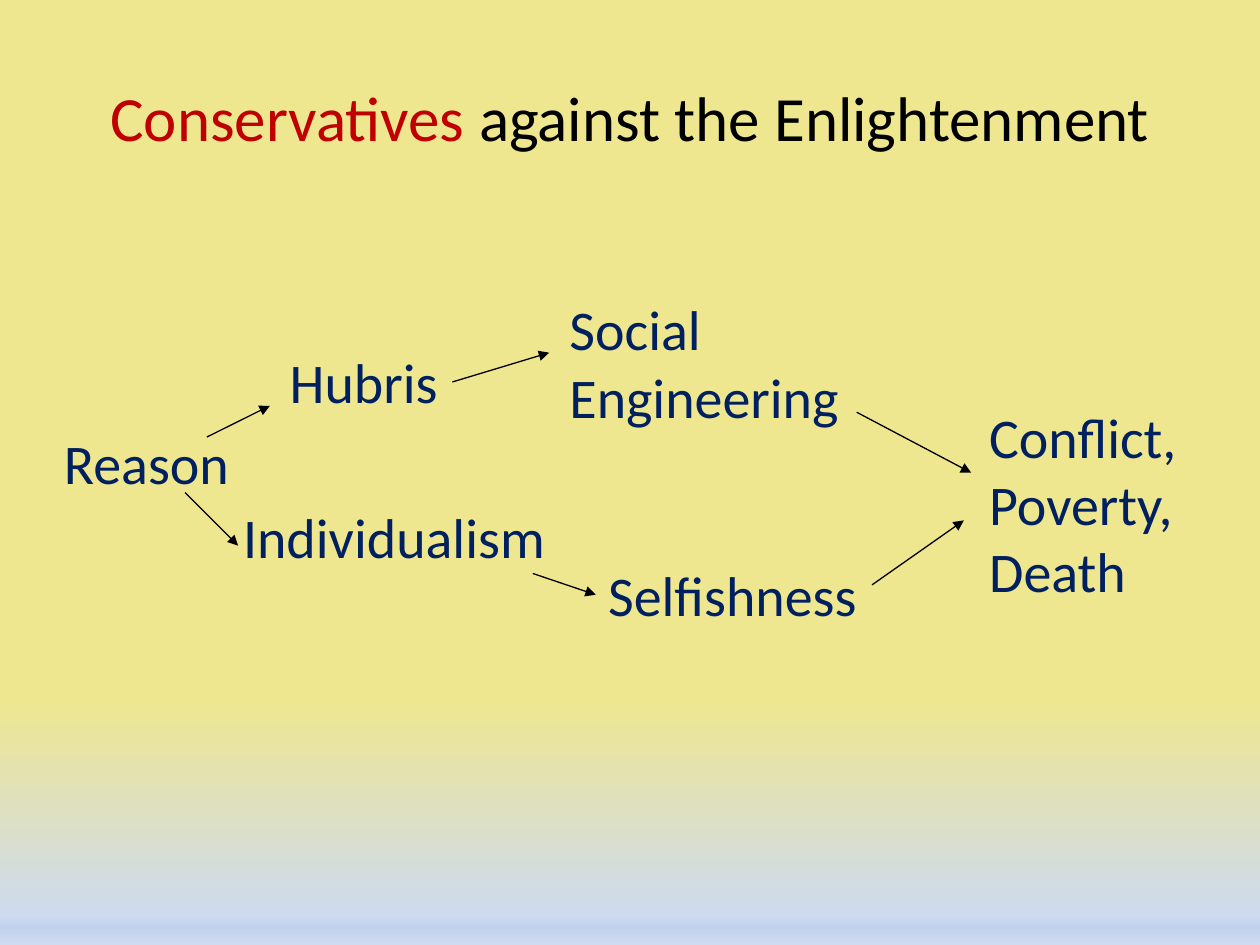
from copy import deepcopy

from pptx import Presentation
from pptx.dml.color import RGBColor
from pptx.enum.shapes import MSO_CONNECTOR
from pptx.enum.text import MSO_ANCHOR, MSO_AUTO_SIZE, PP_ALIGN
from pptx.oxml.ns import qn
from pptx.util import Cm, Pt
from lxml import etree

STRAIGHT = MSO_CONNECTOR.STRAIGHT
MIDDLE = MSO_ANCHOR.MIDDLE
FIT_SHAPE = MSO_AUTO_SIZE.SHAPE_TO_FIT_TEXT
CENTER = PP_ALIGN.CENTER

RED = RGBColor(0xC0, 0x00, 0x00)
BLACK = RGBColor(0x00, 0x00, 0x00)
NAVY = RGBColor(0x00, 0x20, 0x60)
SAND = RGBColor(0xEE, 0xE7, 0x90)
PALE_BLUE = RGBColor(0xCE, 0xDA, 0xF0)
MID_BLUE = RGBColor(0xC2, 0xD1, 0xED)
SOFT_BLUE = RGBColor(0xCF, 0xDB, 0xF0)

FONT = "Calibri"
TITLE_SIZE = Pt(36)
CONCEPT_SIZE = Pt(32)

BACKGROUND_STOPS = [(0.74, SAND), (0.97, PALE_BLUE), (0.98, MID_BLUE), (1, SOFT_BLUE)]

CONCEPTS = [
    (["Reason"], 1.04, 8.51, 3.86, 1.62),
    (["Hubris"], 5.59, 6.88, 3.53, 1.62),
    (["Individualism"], 4.65, 10.01, 6.68, 1.62),
    (["Social", "Engineering"], 11.23, 5.82, 5.99, 3),
    (["Selfishness"], 12.01, 11.18, 5.59, 1.62),
    (["Conflict,", "Poverty,", "Death"], 19.69, 7.98, 4.34, 4.37),
]

ARROWS = [
    (3.73, 9.93, 4.8, 11),
    (4.17, 8.81, 5.44, 8.18),
    (9.12, 7.7, 11.07, 7.11),
    (10.74, 11.56, 12.01, 11.99),
    (17.27, 8.31, 19.58, 9.53),
    (17.58, 11.79, 19.43, 10.49),
]


def paint_background(slide):
    fill = slide.background.fill
    fill.gradient()
    fill.gradient_angle = 270
    stop_list = slide.element.find(".//" + qn("a:gsLst"))
    for _ in range(len(BACKGROUND_STOPS) - len(stop_list)):
        stop_list.append(deepcopy(stop_list[0]))
    for stop, (position, color) in zip(fill.gradient_stops, BACKGROUND_STOPS):
        stop.position = position
        stop.color.rgb = color


def add_run(paragraph, text, size, color):
    run = paragraph.add_run()
    run.text = text
    run.font.name = FONT
    run.font.size = size
    run.font.color.rgb = color


def write_title(slide):
    title = slide.shapes.title
    title.left, title.top = Cm(1.27), Cm(0.76)
    title.width, title.height = Cm(22.86), Cm(3.18)
    title.text_frame.vertical_anchor = MIDDLE
    paragraph = title.text_frame.paragraphs[0]
    paragraph.alignment = CENTER
    add_run(paragraph, "Conservatives ", TITLE_SIZE, RED)
    add_run(paragraph, "against the Enlightenment", TITLE_SIZE, BLACK)


def add_concept(slide, lines, left, top, width, height):
    shape = slide.shapes.add_textbox(Cm(left), Cm(top), Cm(width), Cm(height))
    text_frame = shape.text_frame
    text_frame.word_wrap = False
    text_frame.auto_size = FIT_SHAPE
    for index, line in enumerate(lines):
        paragraph = text_frame.add_paragraph() if index else text_frame.paragraphs[0]
        add_run(paragraph, line, CONCEPT_SIZE, NAVY)


def add_arrow(slide, start_x, start_y, end_x, end_y):
    arrow = slide.shapes.add_connector(
        STRAIGHT, Cm(start_x), Cm(start_y), Cm(end_x), Cm(end_y)
    )
    arrow.line.color.rgb = BLACK
    arrow.line.width = Pt(0.75)
    properties = arrow.element.spPr
    etree.SubElement(properties.find(qn("a:ln")), qn("a:tailEnd"), type="triangle")
    etree.SubElement(properties, qn("a:effectLst"))


def main():
    presentation = Presentation()
    presentation.slide_width = Cm(25.4)
    presentation.slide_height = Cm(19.05)
    slide = presentation.slides.add_slide(presentation.slide_layouts[5])
    paint_background(slide)
    write_title(slide)
    for concept in CONCEPTS:
        add_concept(slide, *concept)
    for arrow in ARROWS:
        add_arrow(slide, *arrow)
    presentation.save("out.pptx")


if __name__ == "__main__":
    main()
